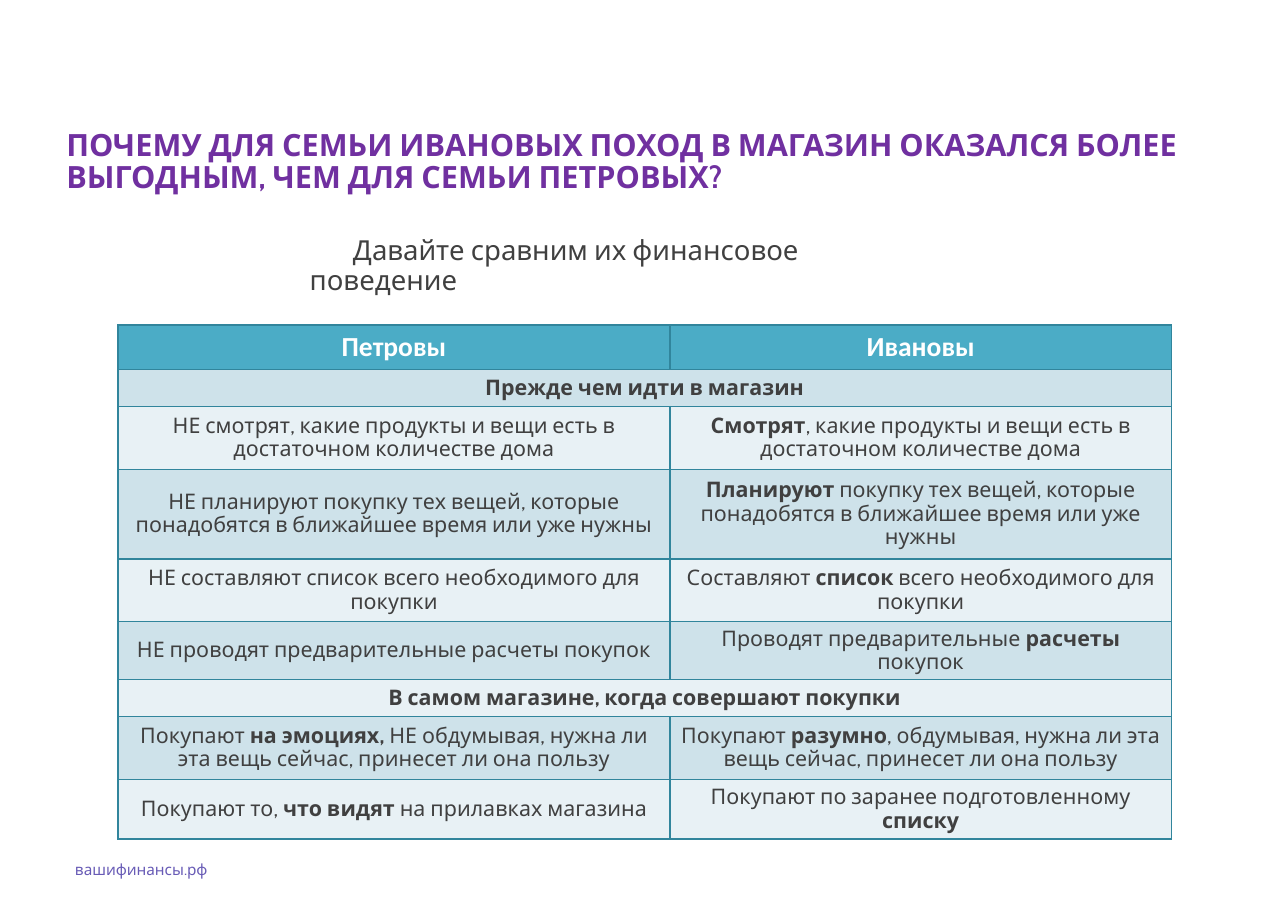
from dataclasses import dataclass

from lxml import etree
from pptx import Presentation
from pptx import util as u
from pptx.dml import color
from pptx.enum import text
from pptx.oxml import ns


@dataclass(frozen=True)
class Theme:
    font: str = "Cabin"
    head_font: str = "Calibri"
    title: str = "7030A0"
    body: str = "404040"
    footer: str = "685BB6"
    head_text: str = "FFFFFF"
    head_fill: str = "4BACC6"
    bands: tuple = ("E8F1F5", "CEE2EA")
    border: str = "31859C"
    border_pt: float = 0.96
    title_pt: int = 20
    lead_pt: int = 18
    cell_pt: int = 14
    footer_pt: int = 10
    inset: float = 0.13
    spacing: float = 0.9


class Page:
    def __init__(self, prs, theme):
        self.theme = theme
        self.s = prs.slides.add_slide(prs.slide_layouts[6])

    def apply(self, target, values):
        for name, value in values.items():
            setattr(target, name, value)

    def add_runs(self, p, content, size, rgb, font=None, bold=False, **para):
        self.apply(p, para)
        for i, part in enumerate(content.split("*")):
            if part:
                r = p.add_run()
                r.text = part
                self.apply(r.font, {
                    "name": font or self.theme.font,
                    "size": u.Pt(size),
                    "bold": bold or i % 2 == 1,
                })
                r.font.color.rgb = color.RGBColor.from_string(rgb)

    def textbox(self, box, content, size, rgb, inset=None, indent=0,
                anchor=text.MSO_ANCHOR.TOP, **fmt):
        tf = self.s.shapes.add_textbox(*map(u.Cm, box)).text_frame
        side = u.Cm(inset or self.theme.inset)
        edge = u.Cm(self.theme.inset)
        self.apply(tf, {
            "word_wrap": True, "vertical_anchor": anchor,
            "margin_left": side, "margin_right": side,
            "margin_top": edge, "margin_bottom": edge,
        })
        p = tf.paragraphs[0]
        if indent:
            p._p.get_or_add_pPr().set("indent", str(u.Cm(indent)))
        self.add_runs(p, content, size, rgb, **fmt)

    def border(self, cell):
        tc_pr = cell._tc.get_or_add_tcPr()
        for i, side in enumerate(("lnL", "lnR", "lnT", "lnB")):
            ln = etree.Element(ns.qn(f"a:{side}"), w=str(u.Pt(self.theme.border_pt)))
            fill = etree.SubElement(ln, ns.qn("a:solidFill"))
            etree.SubElement(fill, ns.qn("a:srgbClr"), val=self.theme.border)
            tc_pr.insert(i, ln)

    def cell(self, cell, content, fill, **fmt):
        edge = u.Cm(self.theme.inset)
        self.apply(cell, {
            "vertical_anchor": text.MSO_ANCHOR.MIDDLE,
            "margin_left": edge, "margin_right": edge,
            "margin_top": edge, "margin_bottom": edge,
        })
        cell.fill.solid()
        cell.fill.fore_color.rgb = color.RGBColor.from_string(fill)
        self.border(cell)
        self.add_runs(cell.text_frame.paragraphs[0], content,
                      alignment=text.PP_ALIGN.CENTER, **fmt)

    def table(self, left, top, widths, rows):
        t = self.theme
        heights = [height for height, _ in rows]
        size = (sum(widths), sum(heights))
        table = self.s.shapes.add_table(
            len(rows), len(widths), *map(u.Cm, (left, top, *size))).table
        for column, width in zip(table.columns, widths):
            column.width = u.Cm(width)
        head = {"size": t.lead_pt, "rgb": t.head_text, "font": t.head_font, "bold": True}
        body = {"size": t.cell_pt, "rgb": t.body, "line_spacing": t.spacing}
        for i, (height, contents) in enumerate(rows):
            table.rows[i].height = u.Cm(height)
            fill = t.bands[i % 2] if i else t.head_fill
            if len(contents) == 1:
                table.cell(i, 0).merge(table.cell(i, len(widths) - 1))
                contents = (*contents, "")
            for j, content in enumerate(contents):
                self.cell(table.cell(i, j), content, fill, **(body if i else head))


ROWS = [
    (0.86, ("Петровы", "Ивановы")),
    (0.86, ("*Прежде чем идти в магазин*",)),
    (1.45, ("НЕ смотрят, какие продукты и вещи есть в достаточном количестве дома",
            "*Смотрят*, какие продукты и вещи есть в достаточном количестве дома")),
    (2.06, ("НЕ планируют покупку тех вещей, которые понадобятся в ближайшее время или уже нужны",
            "*Планируют* покупку тех вещей, которые понадобятся в ближайшее время или уже нужны")),
    (1.45, ("НЕ составляют список всего необходимого для покупки",
            "Составляют *список* всего необходимого для покупки")),
    (0.86, ("НЕ проводят предварительные расчеты покупок",
            "Проводят предварительные *расчеты* покупок")),
    (0.86, ("*В самом магазине, когда совершают покупки*",)),
    (1.45, ("Покупают *на эмоциях,* НЕ обдумывая, нужна ли эта вещь сейчас, принесет ли она пользу",
            "Покупают *разумно*, обдумывая, нужна ли эта вещь сейчас, принесет ли она пользу")),
    (1.37, ("Покупают то, *что видят* на прилавках магазина",
            "Покупают по заранее подготовленному *списку*")),
]


def main():
    prs = Presentation()
    prs.slide_width, prs.slide_height = u.Cm(29.7), u.Cm(21)
    theme = Theme()
    page = Page(prs, theme)
    page.textbox((1.45, 19.48, 10.08, 1.12), "вашифинансы.рф", theme.footer_pt,
                 theme.footer, inset=0.28, anchor=text.MSO_ANCHOR.MIDDLE)
    page.textbox((1.4, 2.9, 27.91, 3.18),
                 "ПОЧЕМУ ДЛЯ СЕМЬИ ИВАНОВЫХ ПОХОД В МАГАЗИН ОКАЗАЛСЯ БОЛЕЕ "
                 "ВЫГОДНЫМ, ЧЕМ ДЛЯ СЕМЬИ ПЕТРОВЫХ?",
                 theme.title_pt, theme.title, bold=True, line_spacing=0.87)
    page.textbox((7.01, 5.33, 14.76, 1.24), "Давайте сравним их финансовое поведение",
                 theme.lead_pt, theme.body, indent=1, line_spacing=theme.spacing)
    page.table(2.72, 7.49, (12.73, 11.56), ROWS)
    prs.save("out.pptx")


if __name__ == "__main__":
    main()
